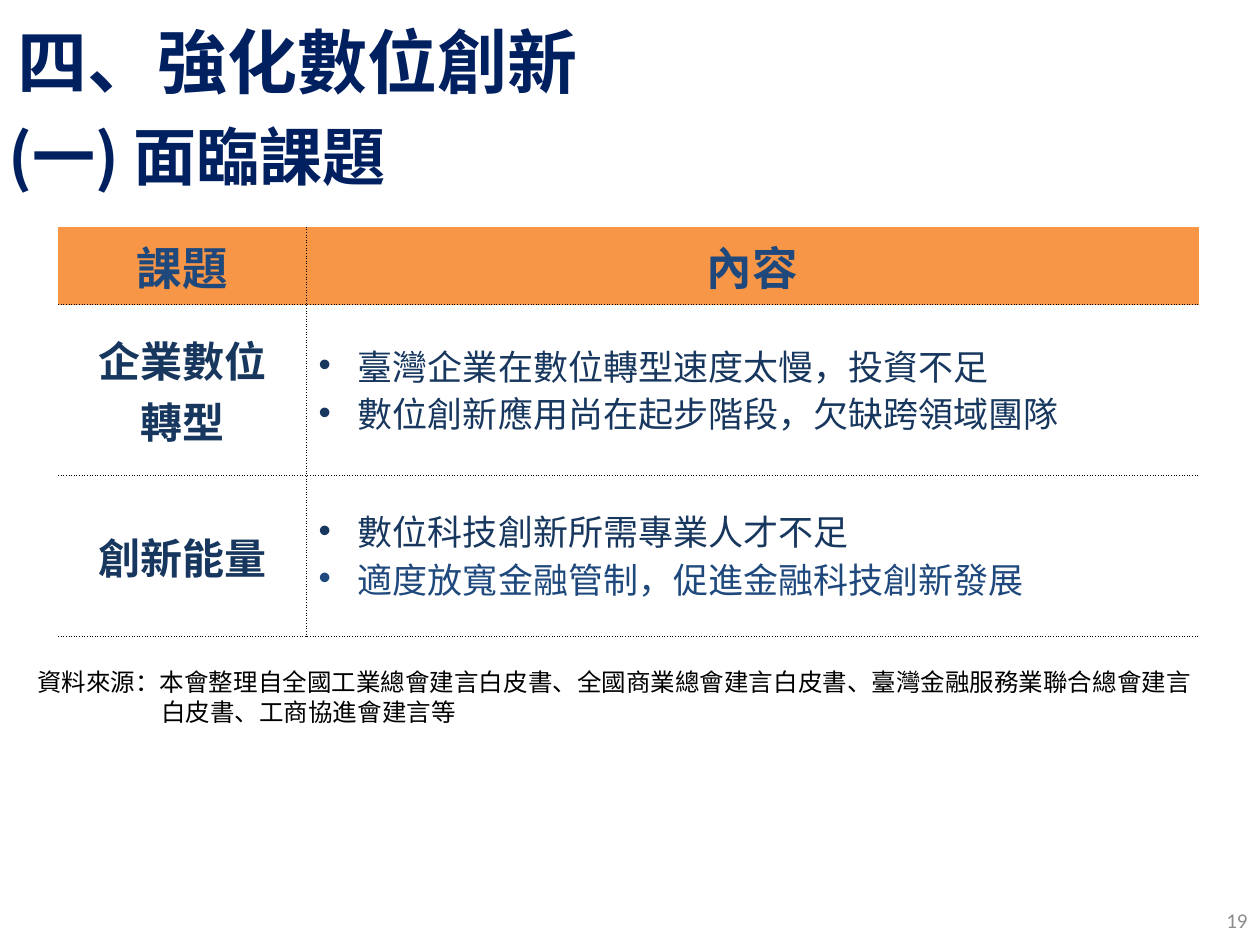
from dataclasses import dataclass

from lxml import etree
from pptx import Presentation
from pptx.dml.color import RGBColor
from pptx.enum import text
from pptx.oxml import ns
from pptx.util import Cm, Length, Pt

FONT = "Noto Sans CJK SC"
NAVY, BLUE, DEEP_BLUE = "002060", "1F497D", "17375E"
ORANGE, GRAY, BLACK = "F79646", "8C8C8C", "000000"
LEFT, CENTER, RIGHT = text.PP_ALIGN.LEFT, text.PP_ALIGN.CENTER, text.PP_ALIGN.RIGHT


@dataclass
class Line:
    text: str
    size: float
    color: str = DEEP_BLUE
    bold: bool = False
    align: text.PP_ALIGN = LEFT
    hang: float = 0  # hanging indent in cm
    bullet: bool = False
    font: str = FONT


@dataclass
class Box:
    left: float
    top: float
    width: float
    height: float

    def lengths(self) -> list[Length]:
        return [Cm(v) for v in (self.left, self.top, self.width, self.height)]


def rgb(color: str) -> RGBColor:
    return RGBColor.from_string(color)


def add_child(parent, tag: str, **attrs: str):
    return etree.SubElement(parent, ns.qn(tag), attrs)


def write(tf, lines: list[Line]) -> None:
    for i, line in enumerate(lines):
        p = tf.add_paragraph() if i else tf.paragraphs[0]
        p.text = line.text
        p.alignment = line.align
        pPr = p._p.get_or_add_pPr()
        if line.hang:
            pPr.set("marL", str(Cm(line.hang)))
            pPr.set("indent", str(-Cm(line.hang)))
        if line.bullet:
            p.line_spacing = Pt(27)
            add_child(pPr, "a:buFont", typeface="Arial")
            add_child(pPr, "a:buChar", char="•")
        f = p.font
        f.size, f.bold, f.name = Pt(line.size), line.bold, line.font
        f.color.rgb = rgb(line.color)
        add_child(pPr.find(ns.qn("a:defRPr")), "a:ea", typeface=line.font)


def add_text(slide, box: Box, line: Line, anchor=text.MSO_ANCHOR.MIDDLE) -> None:
    tf = slide.shapes.add_textbox(*box.lengths()).text_frame
    tf.word_wrap = True
    tf.vertical_anchor = anchor
    write(tf, [line])


def set_borders(cell, dotted: str) -> None:
    """Dot the sides named in dotted (letters of LRTB) and clear the others."""
    tcPr = cell._tc.get_or_add_tcPr()
    for side in "LRTB":
        ln = add_child(tcPr, f"a:ln{side}", w=str(Pt(0.5)))
        if side in dotted:
            add_child(add_child(ln, "a:solidFill"), "a:srgbClr", val=BLACK)
            add_child(ln, "a:prstDash", val="sysDot")
        else:
            add_child(ln, "a:noFill")


def header(label: str) -> list[Line]:
    return [Line(label, 26, BLUE, True, CENTER)]


def topic(*labels: str) -> list[Line]:
    return [Line(label, 24, bold=True, align=CENTER) for label in labels]


def point(label: str, color: str = DEEP_BLUE) -> Line:
    return Line(label, 20, color, hang=0.79, bullet=True)


def add_issue_table(slide, box: Box, widths: list[float], heights: list[float],
                    rows: list[list[list[Line]]]) -> None:
    table = slide.shapes.add_table(len(rows), len(widths), *box.lengths()).table
    table.first_row = table.horz_banding = False
    for column, width in zip(table.columns, widths):
        column.width = Cm(width)
    for r, (row, height) in enumerate(zip(rows, heights)):
        table.rows[r].height = Cm(height)
        for c, lines in enumerate(row):
            cell = table.cell(r, c)
            cell.vertical_anchor = text.MSO_ANCHOR.MIDDLE
            set_borders(cell, ("L" if c else "R") + ("TB" if r else "B"))
            if r:
                cell.fill.background()
            else:
                cell.fill.solid()
                cell.fill.fore_color.rgb = rgb(ORANGE)
            write(cell.text_frame, lines)


def main() -> None:
    prs = Presentation()
    prs.slide_width, prs.slide_height = Cm(25.4), Cm(19.05)
    slide = prs.slides.add_slide(prs.slide_layouts[5])

    title = slide.shapes.title
    title.left, title.top, title.width, title.height = Box(0.1, 0.33, 25.4, 1.8).lengths()
    title.text_frame.auto_size = text.MSO_AUTO_SIZE.NONE
    title.text_frame.vertical_anchor = text.MSO_ANCHOR.MIDDLE
    write(title.text_frame, [Line("四、強化數位創新", 40, NAVY, True, hang=2)])

    add_text(slide, Box(-0.08, 2.24, 25.4, 1.8),
             Line("(一) 面臨課題", 36, NAVY, True, hang=2))
    add_text(slide, Box(19.48, 18.03, 5.92, 1.02),
             Line("19", 12, GRAY, align=RIGHT, font="Calibri"))

    rows = [
        [header("課題"), header("內容")],
        [topic("企業數位", "轉型"),
         [point("臺灣企業在數位轉型速度太慢，投資不足"),
          point("數位創新應用尚在起步階段，欠缺跨領域團隊")]],
        [topic("創新能量"),
         [point("數位科技創新所需專業人才不足"),
          point("適度放寬金融管制，促進金融科技創新發展", BLUE)]],
    ]
    add_issue_table(slide, Box(1.17, 4.57, 23, 8.2), [5, 18], [1.57, 3.45, 3.23], rows)

    source = ("資料來源：本會整理自全國工業總會建言白皮書、全國商業總會建言白皮書、"
              "臺灣金融服務業聯合總會建言白皮書、工商協進會建言等")
    add_text(slide, Box(0.5, 13.33, 24, 1.45), Line(source, 14, BLACK, hang=2.5),
             text.MSO_ANCHOR.TOP)
    prs.save("out.pptx")


if __name__ == "__main__":
    main()
